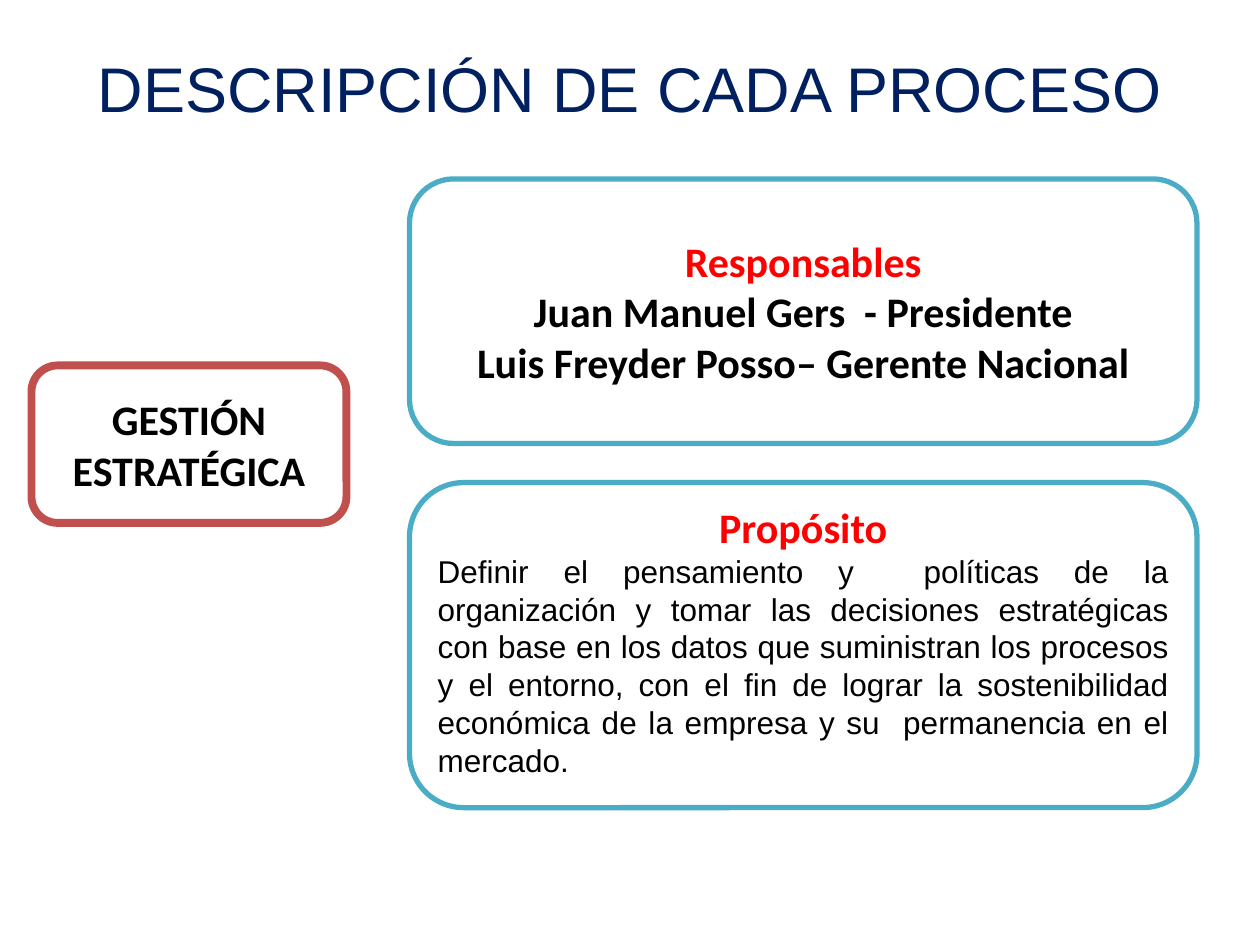
from dataclasses import dataclass

from pptx import Presentation
from pptx.dml.color import RGBColor as RGB
from pptx.enum.shapes import MSO_SHAPE as SHAPE
from pptx.enum.text import MSO_ANCHOR as ANCHOR, PP_ALIGN as ALIGN
from pptx.util import Inches, Pt


@dataclass(frozen=True)
class Theme:
    navy: RGB = RGB(0x00, 0x20, 0x60)
    red: RGB = RGB(0xFF, 0x00, 0x00)
    brick: RGB = RGB(0xC0, 0x50, 0x4D)
    teal: RGB = RGB(0x4B, 0xAC, 0xC6)
    black: RGB = RGB(0x00, 0x00, 0x00)
    white: RGB = RGB(0xFF, 0xFF, 0xFF)
    title_font: str = "Arial"
    body_font: str = "Arial"
    label_font: str = "Calibri"
    title_size: int = 36
    label_size: int = 24
    body_size: int = 18
    body_leading: float = 21.6


class ProcessSlide:
    def __init__(self, prs, theme):
        self.theme = theme
        self.s = prs.slides.add_slide(prs.slide_layouts[6])

    def paragraph(self, tf, text, font, size, color, bold=False, align=ALIGN.CENTER):
        """Fill the empty first paragraph, or append a new one."""
        p = tf.paragraphs[0] if not tf.text else tf.add_paragraph()
        p.text = text
        p.alignment = align
        p.font.name, p.font.size = font, Pt(size)
        p.font.color.rgb, p.font.bold = color, bold
        return p

    def title(self, text, left, top, width, height):
        t = self.theme
        sp = self.s.shapes.add_textbox(*map(Inches, (left, top, width, height)))
        tf = sp.text_frame
        tf.word_wrap = True
        tf.vertical_anchor = ANCHOR.MIDDLE
        self.paragraph(tf, text, t.title_font, t.title_size, t.navy)

    def box(self, left, top, width, height, line, weight):
        sp = self.s.shapes.add_shape(
            SHAPE.ROUNDED_RECTANGLE, *map(Inches, (left, top, width, height)))
        sp.shadow.inherit = False
        sp.fill.solid()
        sp.fill.fore_color.rgb = self.theme.white
        sp.line.color.rgb = line
        sp.line.width = Pt(weight)
        tf = sp.text_frame
        tf.word_wrap = True
        tf.vertical_anchor = ANCHOR.MIDDLE
        return tf

    def label(self, tf, text, color):
        t = self.theme
        self.paragraph(tf, text, t.label_font, t.label_size, color, bold=True)

    def body(self, tf, text):
        t = self.theme
        p = self.paragraph(tf, text, t.body_font, t.body_size, t.black,
                           align=ALIGN.JUSTIFY)
        p.line_spacing = Pt(t.body_leading)


def main():
    prs = Presentation()
    prs.slide_width, prs.slide_height = Inches(10), Inches(7.5)
    theme = Theme()
    slide = ProcessSlide(prs, theme)

    slide.title("DESCRIPCIÓN DE CADA PROCESO", 0.5, 0.3, 9, 0.78)

    process = slide.box(0.25, 2.9, 2.5, 1.25, theme.brick, 4.5)
    slide.label(process, "GESTIÓN ESTRATÉGICA", theme.black)

    detail_left, detail_width = 3.25, 6.25
    owners = slide.box(detail_left, 1.42, detail_width, 2.1, theme.teal, 3)
    slide.label(owners, "Responsables", theme.red)
    for person in ("Juan Manuel Gers  - Presidente",
                   "Luis Freyder Posso– Gerente Nacional"):
        slide.label(owners, person, theme.black)

    purpose = slide.box(detail_left, 3.83, detail_width, 2.58, theme.teal, 3)
    purpose.margin_bottom = Inches(0.13)
    slide.label(purpose, "Propósito", theme.red)
    slide.body(purpose, (
        "Definir el pensamiento y  políticas de la organización y tomar las "
        "decisiones estratégicas con base en los datos que suministran los "
        "procesos y el entorno, con el fin de lograr la sostenibilidad "
        "económica de la empresa y su  permanencia en el mercado."))

    prs.save("out.pptx")


if __name__ == "__main__":
    main()
